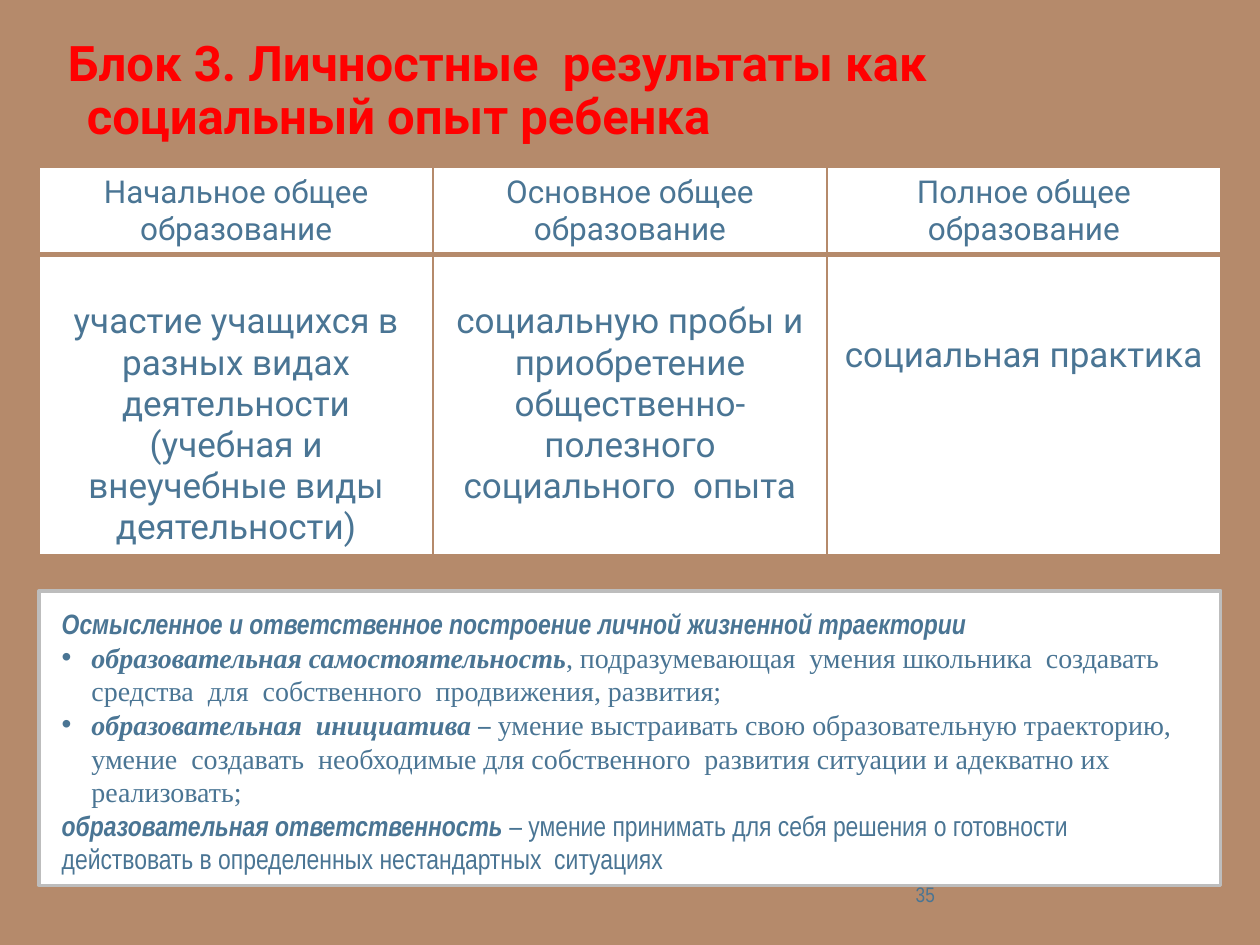
import pptx
import pptx.util
import pptx.dml.color
import pptx.enum.shapes
import pptx.enum.text
import pptx.oxml
import pptx.oxml.ns
import lxml.etree

Cm, Pt = pptx.util.Cm, pptx.util.Pt
Align = pptx.enum.text.PP_ALIGN
Anchor = pptx.enum.text.MSO_ANCHOR

THEME = {
    "background": "B58A6B", "panel": "FFFFFF", "outline": "BDBDBD",
    "text": "4A7594", "accent": "FF0000",
    "main": "Roboto", "narrow": "Arial Narrow", "serif": "Times New Roman",
    "title": 28, "header": 18, "cell": 20, "body": 16, "number": 12,
}

HEADING = "Блок 3. Личностные  результаты как социальный опыт ребенка"
LEVELS = [
    ("Начальное общее образование",
     ["участие учащихся в разных видах деятельности",
      "(учебная и внеучебные виды деятельности)"], 0.95),
    ("Основное общее образование",
     ["социальную пробы и приобретение общественно-полезного социального  опыта"], 0.95),
    ("Полное общее образование", ["социальная практика"], 1.62),
]
TRAJECTORY = [
    (False, [("Осмысленное и ответственное построение личной жизненной траектории", "narrow", True)]),
    (True, [("образовательная самостоятельность", "serif", True),
            (", подразумевающая  умения школьника  создавать средства  для  собственного  "
             "продвижения, развития;", "serif", False)]),
    (True, [("образовательная  инициатива ", "serif", True),
            ("–", "narrow", False),
            (" умение выстраивать свою образовательную траекторию, умение  создавать  "
             "необходимые для собственного  развития ситуации и адекватно их реализовать;",
             "serif", False)]),
    (False, [("образовательная ответственность", "narrow", True),
             (" – умение принимать для себя решения о готовности действовать в "
              "определенных нестандартных  ситуациях", "narrow", False)]),
]
SLIDE_NUMBER = "35"

LEFT, WIDTH = 0.79, 23.82
ROW_HEIGHTS = [1.73, 5.99]
BULLET_INDENT = 0.6


def rgb(name):
    return pptx.dml.color.RGBColor.from_string(THEME[name])


def place(part, left, top, width, height):
    part.left, part.top, part.width, part.height = map(Cm, (left, top, width, height))


def style(run, face, size, color="text", bold=False, italic=False):
    run.font.name, run.font.size = THEME[face], Pt(THEME[size])
    run.font.bold, run.font.italic = bold, italic
    run.font.color.rgb = rgb(color)


def indent(paragraph, left, first):
    properties = paragraph._p.get_or_add_pPr()
    properties.set("marL", str(Cm(left)))
    properties.set("indent", str(Cm(first)))
    return properties


def set_bullet(paragraph, bulleted):
    hang = BULLET_INDENT if bulleted else 0
    properties = indent(paragraph, hang, -hang)
    tag = "a:buChar" if bulleted else "a:buNone"
    bullet = lxml.etree.SubElement(properties, pptx.oxml.ns.qn(tag))
    if bulleted:
        bullet.set("char", "•")


def set_borders(cell, widths):
    properties = cell._tc.get_or_add_tcPr()
    for position, (side, width) in enumerate(widths.items()):
        border = pptx.oxml.parse_xml(
            f'<a:ln{side} {pptx.oxml.ns.nsdecls("a")} w="{Pt(width)}"><a:solidFill>'
            f'<a:srgbClr val="{THEME["background"]}"/></a:solidFill></a:ln{side}>')
        properties.insert(position, border)


def fill_cell(cell, lines, size, widths):
    cell.fill.solid()
    cell.fill.fore_color.rgb = rgb("panel")
    set_borders(cell, widths)
    cell.text_frame.text = "\n".join(lines)
    for paragraph in cell.text_frame.paragraphs:
        paragraph.alignment = Align.CENTER
        for run in paragraph.runs:
            style(run, "main", size)


def add_heading(slide):
    heading = slide.shapes.title
    place(heading, 1.27, 0.76, 22.86, 2.21)
    frame = heading.text_frame
    frame.text = HEADING
    frame.auto_size = pptx.enum.text.MSO_AUTO_SIZE.NONE
    frame.vertical_anchor = Anchor.MIDDLE
    frame.margin_left = frame.margin_right = frame.margin_top = frame.margin_bottom = Cm(0.1)
    paragraph = frame.paragraphs[0]
    indent(paragraph, 0.38, -0.38)
    paragraph.alignment, paragraph.line_spacing = Align.LEFT, 0.9
    style(paragraph.runs[0], "main", "title", "accent", bold=True)


def add_levels(slide):
    levels = slide.shapes.add_table(2, len(LEVELS), Cm(LEFT), Cm(3.38),
                                    Cm(WIDTH), Cm(sum(ROW_HEIGHTS))).table
    levels.first_row = levels.horz_banding = False
    for row, height in zip(levels.rows, ROW_HEIGHTS):
        row.height = Cm(height)
    for column, (level, results, top_margin) in enumerate(LEVELS):
        fill_cell(levels.cell(0, column), [level], "header", {"L": 1, "R": 1, "T": 1, "B": 3})
        result_cell = levels.cell(1, column)
        fill_cell(result_cell, results, "cell", {"L": 1, "R": 1, "T": 3, "B": 1})
        result_cell.margin_top = Cm(top_margin)


def add_number(slide):
    number = slide.shapes.add_textbox(Cm(18.21), Cm(17.65), Cm(5.92), Cm(1.02))
    number.text_frame.word_wrap = True
    number.text_frame.text = SLIDE_NUMBER
    style(number.text_frame.paragraphs[0].runs[0], "narrow", "number")


def add_trajectory(slide):
    panel = slide.shapes.add_shape(pptx.enum.shapes.MSO_SHAPE.RECTANGLE,
                                   Cm(LEFT), Cm(11.91), Cm(WIDTH), Cm(5.94))
    panel.shadow.inherit = False
    panel.fill.solid()
    panel.fill.fore_color.rgb = rgb("panel")
    panel.line.color.rgb = rgb("outline")
    panel.line.width = Pt(2)

    trajectory = slide.placeholders[1]
    place(trajectory, 0.99, 12.07, 23.42, 5.74)
    panel._element.addnext(trajectory._element)
    frame = trajectory.text_frame
    frame.auto_size = pptx.enum.text.MSO_AUTO_SIZE.NONE
    frame.vertical_anchor = Anchor.MIDDLE
    for position, (bulleted, phrases) in enumerate(TRAJECTORY):
        paragraph = frame.add_paragraph() if position else frame.paragraphs[0]
        set_bullet(paragraph, bulleted)
        paragraph.space_before = Pt(0)
        for phrase, face, emphasis in phrases:
            run = paragraph.add_run()
            run.text = phrase
            style(run, face, "body", bold=emphasis, italic=emphasis)


def main():
    deck = pptx.Presentation()
    deck.slide_width, deck.slide_height = Cm(25.4), Cm(19.05)
    slide = deck.slides.add_slide(deck.slide_layouts[1])
    slide.background.fill.solid()
    slide.background.fill.fore_color.rgb = rgb("background")
    add_heading(slide)
    add_levels(slide)
    add_number(slide)
    add_trajectory(slide)
    deck.save("out.pptx")


if __name__ == "__main__":
    main()
